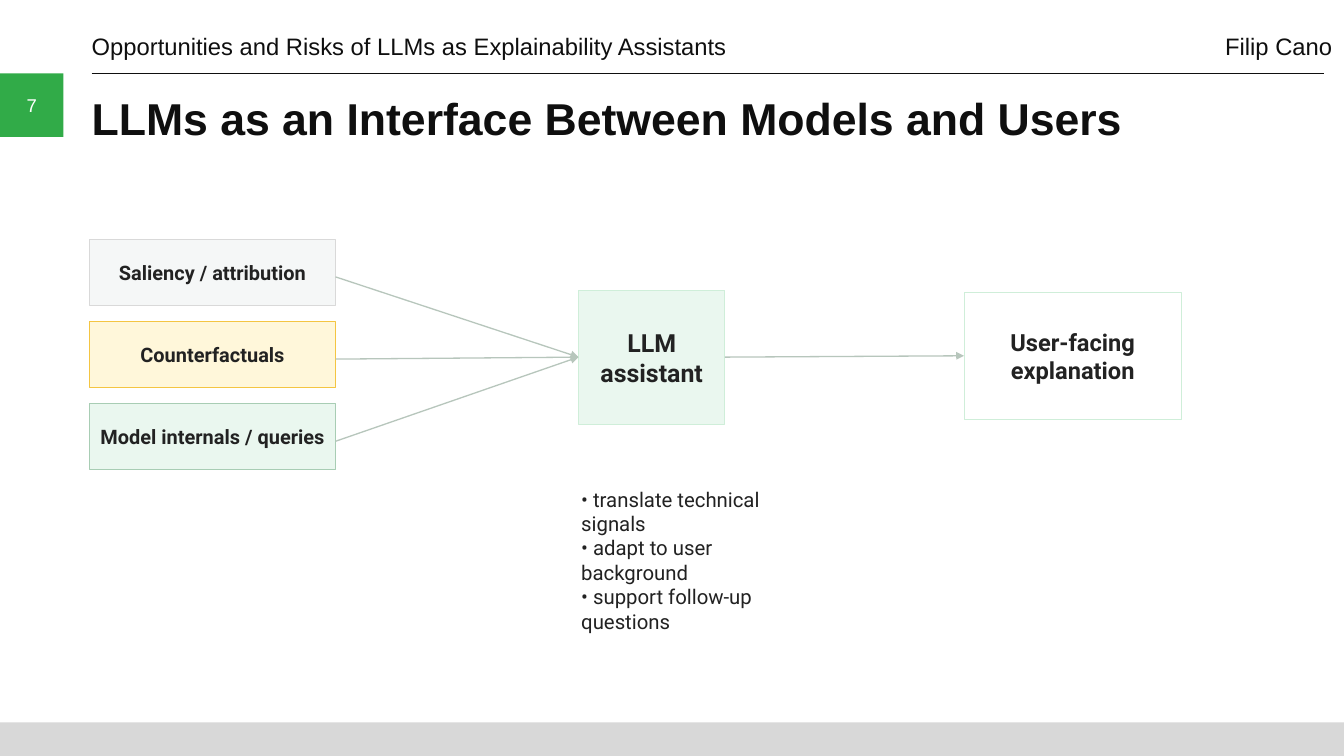
"""Build a slide showing an LLM assistant between model signals and users."""
from typing import NamedTuple, Optional

from lxml.etree import SubElement
from pptx import Presentation
from pptx.dml.color import RGBColor
from pptx.enum.shapes import MSO_CONNECTOR as Connector, MSO_SHAPE as Shape
from pptx.enum.text import MSO_ANCHOR as Anchor, PP_ALIGN as Align
from pptx.oxml.ns import qn
from pptx.util import Pt

INK = RGBColor(0x0F, 0x0F, 0x0F)
TEXT = RGBColor(0x22, 0x22, 0x22)
WHITE = RGBColor(0xFF, 0xFF, 0xFF)
GREEN = RGBColor(0x31, 0xAB, 0x48)
FOOTER_GRAY = RGBColor(0xD8, 0xD8, 0xD8)
ARROW_GRAY = RGBColor(0xB7, 0xC6, 0xBC)
PALE_GRAY = RGBColor(0xF5, 0xF7, 0xF7)
EDGE_GRAY = RGBColor(0xD9, 0xD9, 0xD9)
PALE_YELLOW = RGBColor(0xFF, 0xF7, 0xDA)
YELLOW = RGBColor(0xF4, 0xC5, 0x42)
PALE_GREEN = RGBColor(0xEA, 0xF7, 0xEF)
EDGE_GREEN = RGBColor(0xA8, 0xCD, 0xB4)
MINT = RGBColor(0xCF, 0xEE, 0xD9)

PAGE_WIDTH, PAGE_HEIGHT = 1023.84, 576
MARGIN = 69.84
HEADER_WIDTH = 946
LEFT_SIDE, RIGHT_SIDE = 1, 3


class Area(NamedTuple):
    left: float
    top: float
    width: float
    height: float


class Block(NamedTuple):
    text: str
    area: Area
    fill: RGBColor
    edge: Optional[RGBColor] = None
    size: float = 15.2


SOURCE = Area(68.4, 182.16, 187.2, 50.4)
SOURCE_STEP = 62.64
ARROW_DROP = 3.6
SOURCES = [
    Block(text, SOURCE._replace(top=SOURCE.top + row * SOURCE_STEP), fill, edge)
    for row, (text, fill, edge) in enumerate([
        ("Saliency / attribution", PALE_GRAY, EDGE_GRAY),
        ("Counterfactuals", PALE_YELLOW, YELLOW),
        ("Model internals / queries", PALE_GREEN, EDGE_GREEN),
    ])
]
ASSISTANT = Block("LLM assistant", Area(440.64, 221, 111.6, 102.24), PALE_GREEN, MINT, 19)
EXPLANATION = Block("User-facing explanation", Area(734.4, 222.5, 165.6, 97.2), WHITE, MINT, 18)
ROLES = """• translate technical signals
• adapt to user background
• support follow-up questions"""


def write(shape, text: str, *, size: float, font="Roboto", color=TEXT, bold=False,
          align=Align.LEFT, anchor=Anchor.MIDDLE, right_tab: Optional[float] = None):
    """Fill a shape with formatted text, one paragraph per line."""
    frame = shape.text_frame
    frame.word_wrap = True
    frame.vertical_anchor = anchor
    frame.margin_left = frame.margin_right = frame.margin_top = frame.margin_bottom = 0
    frame.text = text
    for paragraph in frame.paragraphs:
        paragraph.alignment = align
        if right_tab is not None:
            tabs = SubElement(paragraph._p.get_or_add_pPr(), qn("a:tabLst"))
            SubElement(tabs, qn("a:tab"), pos=str(Pt(right_tab)), algn="r")
        for span in paragraph.runs:
            span.font.name = font
            span.font.size = Pt(size)
            span.font.bold = bold
            span.font.color.rgb = color


def add_text(page, area: Area, text: str, **style):
    """Add a text box and write into it."""
    box = page.shapes.add_textbox(*map(Pt, area))
    write(box, text, **style)


def add_rectangle(page, area: Area, fill: RGBColor, edge: Optional[RGBColor] = None):
    """Add a flat rectangle, outlined when an edge colour is given."""
    box = page.shapes.add_shape(Shape.RECTANGLE, *map(Pt, area))
    box.shadow.inherit = False
    box.fill.solid()
    box.fill.fore_color.rgb = fill
    if edge is None:
        box.line.fill.background()
    else:
        box.line.color.rgb = edge
        box.line.width = Pt(0.75)
    return box


def add_block(page, block: Block):
    """Add a labelled diagram block."""
    box = add_rectangle(page, block.area, block.fill, block.edge)
    write(box, block.text, size=block.size, bold=True, align=Align.CENTER)
    return box


def add_line(page, start: tuple, end: tuple, color: RGBColor, width: float, arrow=False):
    """Add a straight line, with an arrowhead at its end if asked."""
    line = page.shapes.add_connector(Connector.STRAIGHT, *map(Pt, start + end))
    line.line.color.rgb = color
    line.line.width = Pt(width)
    if arrow:
        SubElement(line.line._get_or_add_ln(), qn("a:tailEnd"), type="triangle")
    SubElement(line._element.spPr, qn("a:effectLst"))
    return line


def add_frame(page):
    """Add the header, title, page number and footer band."""
    number = add_rectangle(page, Area(0, 56, 48.24, 48.24), GREEN)
    write(number, "7", size=14.1, font="Arial", color=WHITE, align=Align.CENTER)
    add_rectangle(page, Area(0, 550.5, PAGE_WIDTH, 25.5), FOOTER_GRAY)
    add_line(page, (MARGIN, 56), (1008.72, 56), INK, 0.75)
    add_text(page, Area(MARGIN, 69.12, 940.32, 54.72),
             "LLMs as an Interface Between Models and Users",
             size=34, font="Arial", color=INK, bold=True, anchor=Anchor.TOP)
    add_text(page, Area(MARGIN, 25.92, HEADER_WIDTH, 20.16),
             "Opportunities and Risks of LLMs as Explainability Assistants\tFilip Cano",
             size=18.1, font="Arial", color=INK, anchor=Anchor.BOTTOM,
             right_tab=HEADER_WIDTH - 1)


def add_diagram(page):
    """Add the blocks, the arrows that join them and the assistant's roles."""
    assistant = add_block(page, ASSISTANT)
    explanation = add_block(page, EXPLANATION)
    for source in SOURCES:
        add_block(page, source)
        area = source.area
        start = (area.left + area.width, area.top + area.height / 2 + ARROW_DROP)
        arrow = add_line(page, start, start, ARROW_GRAY, 1, arrow=True)
        arrow.end_connect(assistant, LEFT_SIDE)
    arrow = add_line(page, (0, 0), (0, 0), ARROW_GRAY, 1, arrow=True)
    arrow.begin_connect(assistant, RIGHT_SIDE)
    arrow.end_connect(explanation, LEFT_SIDE)
    add_text(page, Area(442.8, 374.4, 158.4, 104.4), ROLES, size=15.5)


def main():
    """Create the deck and save it."""
    deck = Presentation()
    deck.slide_width, deck.slide_height = Pt(PAGE_WIDTH), Pt(PAGE_HEIGHT)
    page = deck.slides.add_slide(deck.slide_layouts[6])
    add_frame(page)
    add_diagram(page)
    deck.save("out.pptx")


if __name__ == "__main__":
    main()
